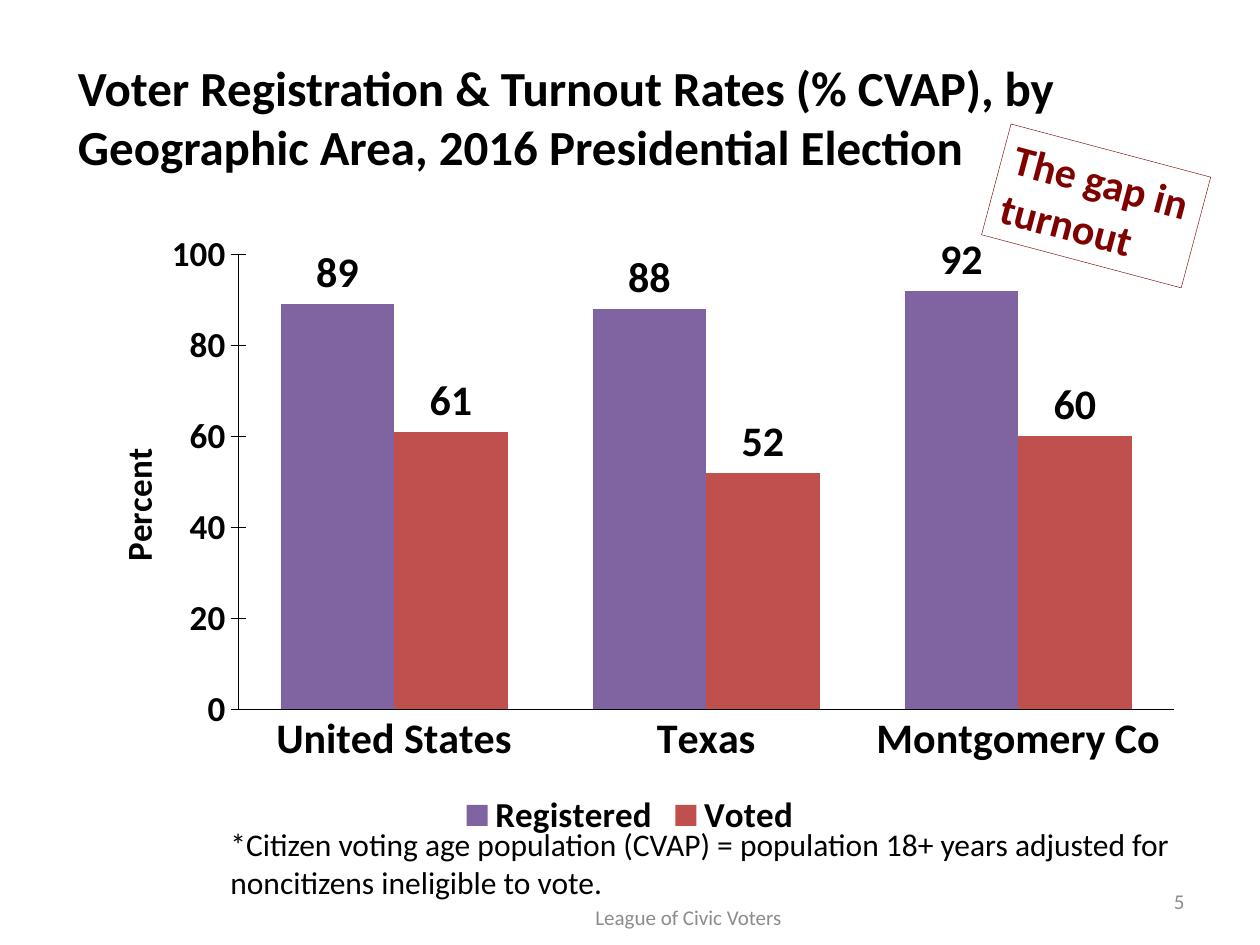
from lxml import etree
from pptx import Presentation
from pptx.chart.data import CategoryChartData
from pptx.dml.color import RGBColor
from pptx.enum.chart import XL_CHART_TYPE as CT, XL_LABEL_POSITION as LP
from pptx.enum.chart import XL_LEGEND_POSITION as LEG, XL_TICK_MARK as TM
from pptx.enum.text import MSO_ANCHOR as VA, PP_ALIGN as AL
from pptx.oxml.ns import qn
from pptx.util import Inches, Pt

FONT = "Calibri"
COLORS = {"text": "000000", "muted": "8C8C8C", "callout": "800000",
          "Registered": "8064A2", "Voted": "C0504D"}
TITLE = ["Voter Registration & Turnout Rates (% CVAP), by "
         "Geographic Area, 2016 Presidential Election"]
CALLOUT = ["The gap in", "turnout"]
NOTE = ["*Citizen voting age population (CVAP) = population 18+ years adjusted for",
        "noncitizens ineligible to vote."]
FOOTER = ["League of Civic Voters"]
PAGE = ["5"]
AREAS = ["United States", "Texas", "Montgomery Co"]
RATES = {"Registered": [89, 88, 92], "Voted": [61, 52, 60]}
CHART_BOX = (0.5, 1.75, 9, 4.95)
PLOT_BOX = (1.89, 2.02, 7.43, 3.61)
AXIS_TITLE_AT = (0.85, 3.51)


def rgb(name):
    return RGBColor.from_string(COLORS[name])


def style(font, size, color="text", bold=False):
    font.name, font.size, font.bold = FONT, Pt(size), bold
    font.color.rgb = rgb(color)


def add_text(slide, lines, box, size, color="text", bold=False,
             align=AL.LEFT, anchor=VA.TOP, wrap=True):
    sp = slide.shapes.add_textbox(*map(Inches, box))
    tf = sp.text_frame
    tf.word_wrap, tf.vertical_anchor = wrap, anchor
    tf.text = "\n".join(lines)
    for p in tf.paragraphs:
        p.alignment = align
        style(p.font, size, color, bold)
    return sp


def set_layout(parent, box, inner=False):
    for old in parent.findall(qn("c:layout")):
        parent.remove(old)
    layout = etree.Element(qn("c:layout"))
    manual = etree.SubElement(layout, qn("c:manualLayout"))
    left, top, width, height = CHART_BOX
    settings = [("layoutTarget", "inner")] if inner else []
    settings += [("xMode", "edge"), ("yMode", "edge")]
    settings += zip("xywh", (f"{v:.4f}" for v in (
        (box[0] - left) / width, (box[1] - top) / height,
        *(size / whole for size, whole in zip(box[2:], (width, height))))))
    for tag, value in settings:
        etree.SubElement(manual, qn(f"c:{tag}")).set("val", value)
    text = parent.find(qn("c:tx"))
    if text is None:
        parent.insert(0, layout)
    else:
        text.addnext(layout)


def style_axis(axis, size, tick):
    axis.has_major_gridlines = False
    axis.major_tick_mark, axis.minor_tick_mark = tick, TM.NONE
    style(axis.tick_labels.font, size, bold=True)
    axis.format.line.color.rgb = rgb("text")
    axis.format.line.width = Pt(0.25)


def add_rates_chart(slide):
    data = CategoryChartData(number_format="0")
    data.categories = AREAS
    for name, values in RATES.items():
        data.add_series(name, values)
    chart = slide.shapes.add_chart(
        CT.COLUMN_CLUSTERED, *map(Inches, CHART_BOX), data).chart
    style(chart.font, 18)
    chart.has_title = False
    chart.has_legend = True
    chart.legend.position = LEG.BOTTOM
    chart.legend.include_in_layout = False
    style(chart.legend.font, 20, bold=True)

    style_axis(chart.category_axis, 24, TM.NONE)
    percent = chart.value_axis
    style_axis(percent, 20, TM.CROSS)
    percent.minimum_scale, percent.maximum_scale, percent.major_unit = 0, 100, 20
    percent.tick_labels.number_format = "0"
    percent.tick_labels.number_format_is_linked = False
    title = percent.axis_title
    title.text_frame.text = "Percent"
    style(title.text_frame.paragraphs[0].font, 20, bold=True)

    plot = chart.plots[0]
    plot.gap_width, plot.overlap, plot.vary_by_categories = 75, 0, False
    for series in plot.series:
        series.format.fill.solid()
        series.format.fill.fore_color.rgb = rgb(series.name)
        labels = series.data_labels
        labels.show_value, labels.position = True, LP.OUTSIDE_END
        labels.number_format, labels.number_format_is_linked = "0", False
        style(labels.font, 24, bold=True)

    set_layout(chart.element.find(".//" + qn("c:plotArea")), PLOT_BOX, inner=True)
    set_layout(chart.element.find(".//" + qn("c:valAx") + "/" + qn("c:title")),
               AXIS_TITLE_AT)


def main():
    prs = Presentation()
    prs.slide_width, prs.slide_height = Inches(10), Inches(7.5)
    slide = prs.slides.add_slide(prs.slide_layouts[6])
    add_text(slide, TITLE, (0.52, 0.3, 8.98, 1.25), 28, bold=True, anchor=VA.MIDDLE)
    add_rates_chart(slide)
    sp = add_text(slide, CALLOUT, (7.88, 1.18, 1.64, 0.91), 24, "callout",
                  bold=True, wrap=False)
    sp.rotation = 14.9
    sp.line.color.rgb = rgb("callout")
    sp.line.width = Pt(0.25)
    add_text(slide, PAGE, (7.17, 6.95, 2.33, 0.4), 12, "muted",
             align=AL.RIGHT, anchor=VA.MIDDLE)
    add_text(slide, FOOTER, (3.68, 7.08, 3.57, 0.4), 12, "muted",
             align=AL.CENTER, anchor=VA.MIDDLE)
    add_text(slide, NOTE, (1.73, 6.5, 7.78, 0.71), 18, wrap=False)
    prs.save("out.pptx")


if __name__ == "__main__":
    main()
